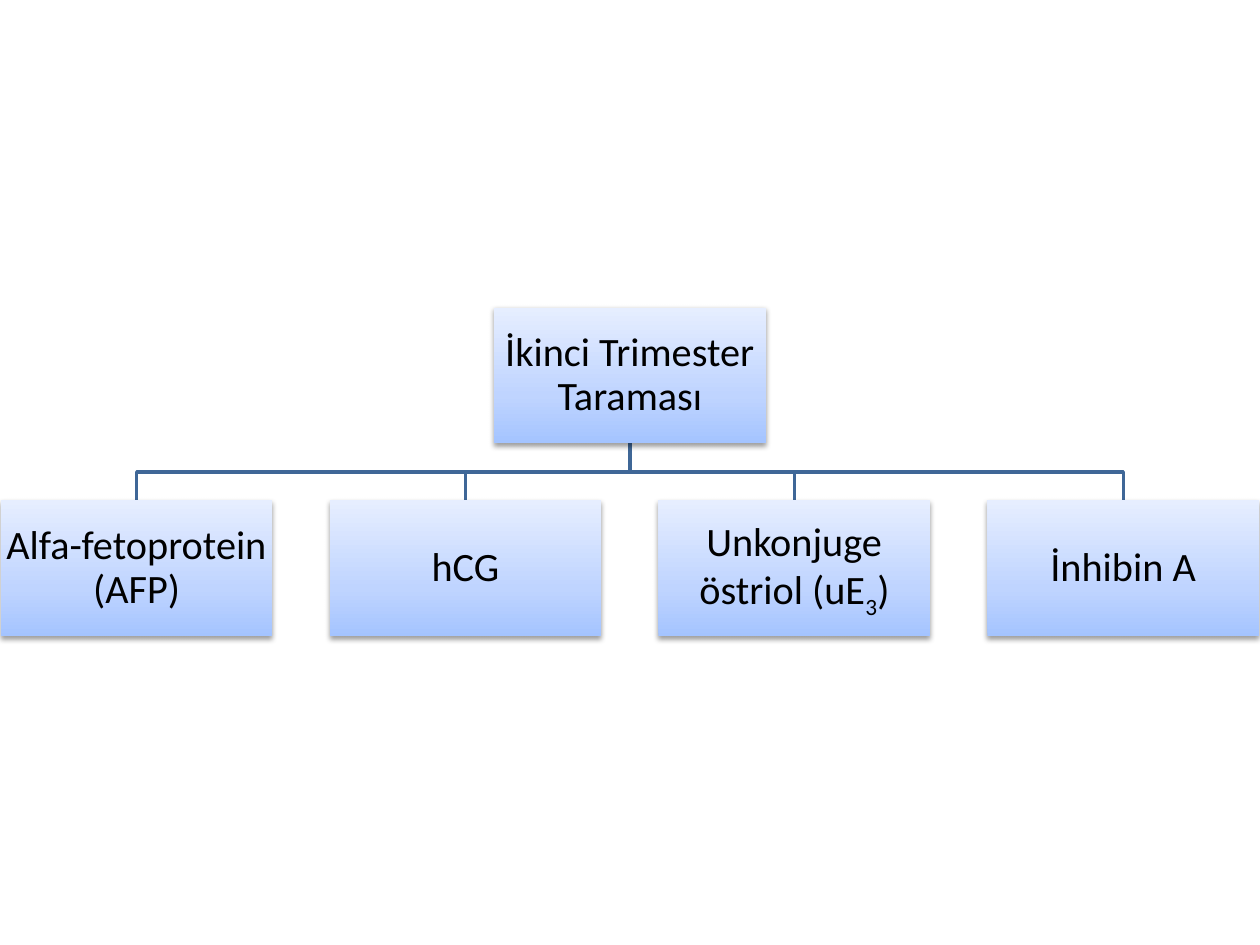
from copy import deepcopy

from lxml import etree
from pptx import Presentation
from pptx.dml.color import RGBColor
from pptx.enum.shapes import MSO_SHAPE
from pptx.enum.text import MSO_ANCHOR, PP_ALIGN
from pptx.oxml.ns import qn
from pptx.util import Cm, Pt

RECTANGLE = MSO_SHAPE.RECTANGLE
MIDDLE = MSO_ANCHOR.MIDDLE
CENTER = PP_ALIGN.CENTER

ROOT = [("İkinci Trimester Taraması", False)]
MARKERS = [
    [("Alfa-fetoprotein (AFP)", False)],
    [("hCG", False)],
    [("Unkonjuge östriol (uE", False), ("3", True), (")", False)],
    [("İnhibin A", False)],
]
GRADIENT = [(0, "A4C4FF"), (0.35, "BFD4FF"), (1, "E6EEFF")]
LINE_COLOR = "3F6797"
TEXT_COLOR = "000000"

SLIDE_WIDTH, SLIDE_HEIGHT = Cm(25.4), Cm(19.05)
BOX_WIDTH, BOX_HEIGHT, GAP = Cm(5.48), Cm(2.74), Cm(1.15)
ROOT_TOP = Cm(6.2)
MARKER_TOP = ROOT_TOP + BOX_HEIGHT + GAP
PITCH = BOX_WIDTH + GAP
FIRST_LEFT = (SLIDE_WIDTH - len(MARKERS) * PITCH + GAP) // 2


def color(value):
    return RGBColor.from_string(value)


def add_shadow(shape):
    shape.shadow.inherit = False
    effects = shape._element.spPr.find(qn("a:effectLst"))
    shadow = etree.SubElement(
        effects, qn("a:outerShdw"), blurRad="40000", dist="20000",
        dir="5400000", rotWithShape="0")
    shade = etree.SubElement(shadow, qn("a:srgbClr"), val="000000")
    etree.SubElement(shade, qn("a:alpha"), val="38000")


def fill_gradient(shape):
    shape.fill.gradient()
    shape.fill.gradient_angle = 90
    stop_list = shape._element.spPr.find(".//" + qn("a:gsLst"))
    stop_list.append(deepcopy(stop_list[-1]))
    for stop, (position, value) in zip(shape.fill.gradient_stops, GRADIENT):
        stop.position = position
        stop.color.rgb = color(value)


def add_box(slide, left, top, spans):
    box = slide.shapes.add_shape(RECTANGLE, left, top, BOX_WIDTH, BOX_HEIGHT)
    fill_gradient(box)
    box.line.fill.background()
    add_shadow(box)
    frame = box.text_frame
    frame.word_wrap = True
    frame.vertical_anchor = MIDDLE
    frame.margin_left = frame.margin_right = Cm(0.04)
    frame.margin_top = frame.margin_bottom = Cm(0.04)
    para = frame.paragraphs[0]
    para.alignment = CENTER
    para.line_spacing = 0.9
    para.font.name = "Calibri"
    para.font.size = Pt(23)
    para.font.color.rgb = color(TEXT_COLOR)
    for text, subscript in spans:
        span = para.add_run()
        span.text = text
        if subscript:
            span.font._element.set("baseline", "-25000")


def add_branch(slide, end_x):
    start_x, start_y = SLIDE_WIDTH // 2, ROOT_TOP + BOX_HEIGHT
    bend_y = start_y + GAP // 2
    builder = slide.shapes.build_freeform(start_x, start_y)
    builder.add_line_segments(
        [(start_x, bend_y), (end_x, bend_y), (end_x, MARKER_TOP)], close=False)
    branch = builder.convert_to_shape()
    branch.fill.background()
    branch.line.color.rgb = color(LINE_COLOR)
    branch.line.width = Pt(2)
    branch.shadow.inherit = False


def main():
    """Build the screening chart: one root box branching to its markers."""
    deck = Presentation()
    deck.slide_width, deck.slide_height = SLIDE_WIDTH, SLIDE_HEIGHT
    slide = deck.slides.add_slide(deck.slide_layouts[6])
    lefts = [FIRST_LEFT + index * PITCH for index in range(len(MARKERS))]
    for left in reversed(lefts):
        add_branch(slide, left + BOX_WIDTH // 2)
    add_box(slide, (SLIDE_WIDTH - BOX_WIDTH) // 2, ROOT_TOP, ROOT)
    for left, spans in zip(lefts, MARKERS):
        add_box(slide, left, MARKER_TOP, spans)
    deck.save("out.pptx")


if __name__ == "__main__":
    main()
